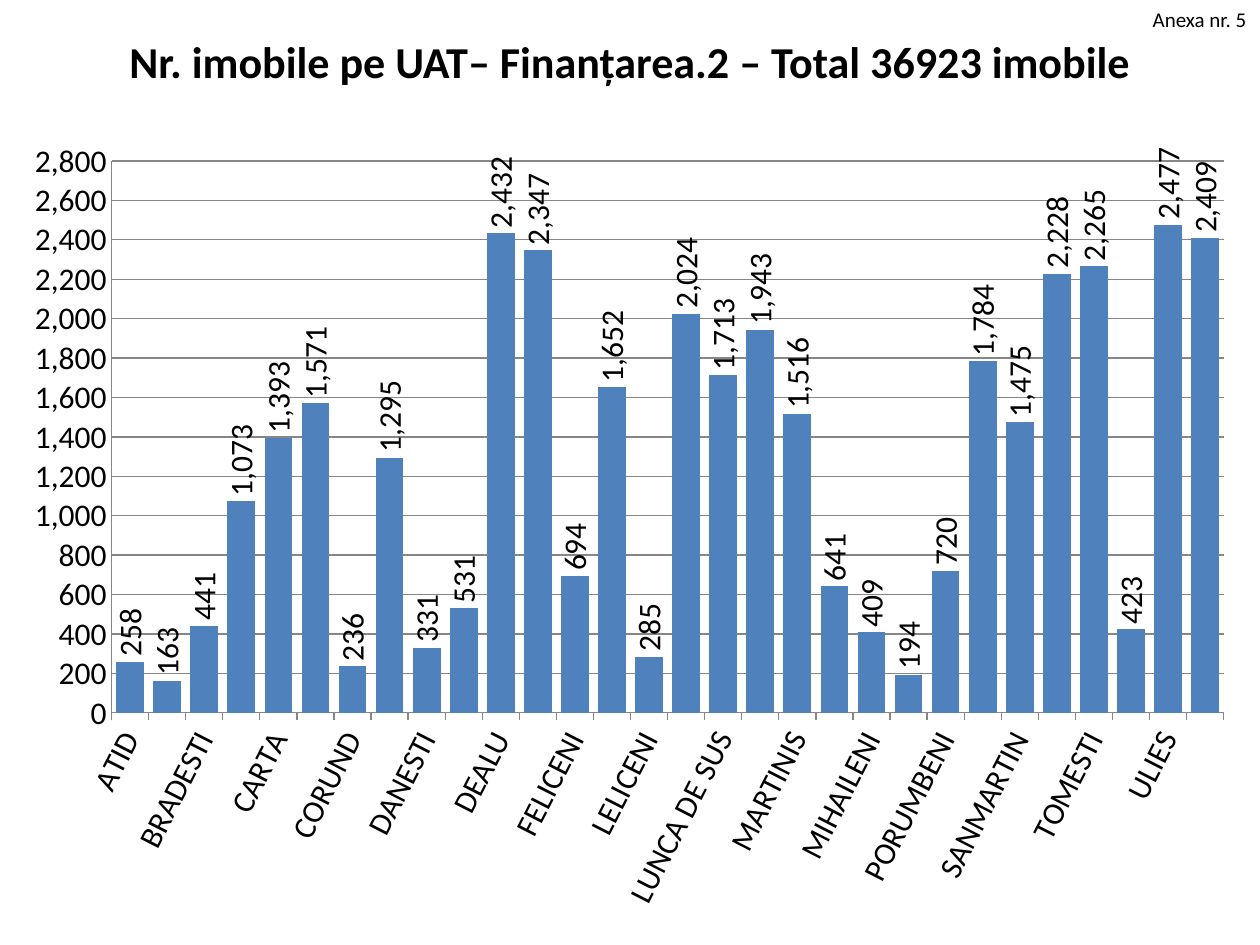
"""Build a slide with a column chart of properties per administrative unit."""
from dataclasses import dataclass

from lxml import etree
from pptx import Presentation
from pptx import util as u
from pptx.chart.chart import Chart
from pptx.chart.data import CategoryChartData
from pptx.dml.color import RGBColor
from pptx.enum import chart as charts, text
from pptx.oxml import parse_xml
from pptx.oxml.ns import nsdecls, qn
from pptx.slide import Slide


@dataclass(frozen=True)
class Theme:
    """Typeface, type sizes and colours."""
    font: str = "Calibri"
    title_size: float = 25.2
    chart_size: float = 18
    note_size: float = 12
    ink: RGBColor = RGBColor(0, 0, 0)
    column: RGBColor = RGBColor(0x4F, 0x81, 0xBD)
    line: RGBColor = RGBColor(0x86, 0x86, 0x86)


@dataclass(frozen=True)
class Box:
    """A rectangle in shares of its container."""
    left: float
    top: float
    width: float
    height: float

    def on_slide(self) -> tuple[int, int, int, int]:
        """Return the rectangle as slide lengths."""
        return (int(self.left * WIDTH), int(self.top * HEIGHT),
                int(self.width * WIDTH), int(self.height * HEIGHT))


@dataclass(frozen=True)
class Label:
    """A single line of text and its setting."""
    wording: str
    box: Box
    size: float
    bold: bool = False
    wrap: bool = True
    align: text.PP_ALIGN = text.PP_ALIGN.LEFT
    anchor: text.MSO_ANCHOR = text.MSO_ANCHOR.TOP


THEME = Theme()
WIDTH, HEIGHT = u.Inches(10), u.Inches(7.5)
CHART_BOX = Box(0.008, 0.1333, 0.983, 0.844)
PLOT_BOX = Box(0.082, 0.044, 0.898, 0.692)
LABELS = (
    Label("Nr. imobile pe UAT– Finanțarea.2 – Total 36923 imobile",
          Box(0.05, 0.005, 0.9, 0.118), THEME.title_size, bold=True,
          align=text.PP_ALIGN.CENTER, anchor=text.MSO_ANCHOR.MIDDLE),
    Label("Anexa nr. 5", Box(0.905, 0, 0.095, 0.04), THEME.note_size, wrap=False),
)
PROPERTIES = {
    "ATID": 258, "AVRAMESTI": 163, "BRADESTI": 441, "CAPALNITA": 1073,
    "CARTA": 1393, "CICEU": 1571, "CORUND": 236, "CRISTURU SECUIESC": 1295,
    "DANESTI": 331, "DARJIU": 531, "DEALU": 2432, "DITRAU": 2347,
    "FELICENI": 694, "FRUMOASA": 1652, "LELICENI": 285, "LUNCA DE JOS": 2024,
    "LUNCA DE SUS": 1713, "LUPENI": 1943, "MARTINIS": 1516, "MERESTI": 641,
    "MIHAILENI": 409, "PAULENI-CIUC": 194, "PORUMBENI": 720, "PRAID": 1784,
    "SANMARTIN": 1475, "SATU MARE": 2228, "TOMESTI": 2265, "TULGHES": 423,
    "ULIES": 2477, "VLAHITA": 2409,
}


def set_font(font, size: float, bold: bool = False) -> None:
    """Apply the theme's typeface and ink."""
    font.name, font.size, font.bold = THEME.font, u.Pt(size), bold
    font.color.rgb = THEME.ink


def add_label(slide: Slide, label: Label) -> None:
    """Add one text box."""
    frame = slide.shapes.add_textbox(*label.box.on_slide()).text_frame
    frame.word_wrap, frame.vertical_anchor = label.wrap, label.anchor
    paragraph = frame.paragraphs[0]
    paragraph.alignment = label.align
    run = paragraph.add_run()
    run.text = label.wording
    set_font(run.font, label.size, label.bold)


def turn_text(element: etree.ElementBase, degrees: int) -> None:
    """Rotate the text of a chart part."""
    body = element.find(f"{qn('c:txPr')}/{qn('a:bodyPr')}")
    body.set("rot", str(degrees * 60000))
    body.set("vert", "horz")


def place_plot(chart: Chart, box: Box) -> None:
    """Fix the inner plot area within the chart."""
    plot_area = chart.plots[0]._element.getparent()
    for layout in plot_area.findall(qn("c:layout")):
        plot_area.remove(layout)
    settings = {"layoutTarget": "inner", "xMode": "edge", "yMode": "edge",
                "x": box.left, "y": box.top, "w": box.width, "h": box.height}
    inner = "".join(f'<c:{name} val="{value}"/>' for name, value in settings.items())
    plot_area.insert(0, parse_xml(
        f'<c:layout {nsdecls("c")}><c:manualLayout>{inner}</c:manualLayout></c:layout>'))


def style_axes(chart: Chart) -> None:
    """Set scale, gridlines, ticks and labels of both axes."""
    category, value = chart.category_axis, chart.value_axis
    value.minimum_scale, value.maximum_scale, value.major_unit = 0, 2800, 200
    value.has_major_gridlines = True
    value.major_tick_mark = charts.XL_TICK_MARK.NONE
    category.major_tick_mark = charts.XL_TICK_MARK.OUTSIDE
    value.tick_labels.number_format = "#,##0"
    value.tick_labels.number_format_is_linked = False
    for line in (category.format.line, value.format.line, value.major_gridlines.format.line):
        line.color.rgb, line.width = THEME.line, u.Pt(0.75)
    for axis in (category, value):
        set_font(axis.tick_labels.font, THEME.chart_size)
    turn_text(category._element, -63)


def add_property_chart(slide: Slide) -> None:
    """Add the column chart with its upright value labels."""
    data = CategoryChartData(number_format="#,##0")
    data.categories = list(PROPERTIES)
    data.add_series("Series 1", list(PROPERTIES.values()))
    chart = slide.shapes.add_chart(
        charts.XL_CHART_TYPE.COLUMN_CLUSTERED, *CHART_BOX.on_slide(), data).chart
    chart.has_legend = chart.has_title = False
    set_font(chart.font, THEME.chart_size)
    plot = chart.plots[0]
    plot.gap_width, plot.vary_by_categories = 34, False
    series = plot.series[0]
    series.format.fill.solid()
    series.format.fill.fore_color.rgb = THEME.column
    labels = series.data_labels
    labels.show_value = True
    labels.number_format, labels.number_format_is_linked = "#,##0", False
    labels.position = charts.XL_LABEL_POSITION.OUTSIDE_END
    set_font(labels.font, THEME.chart_size)
    turn_text(labels._element, -90)
    style_axes(chart)
    place_plot(chart, PLOT_BOX)


def main() -> None:
    """Build and save the presentation."""
    presentation = Presentation()
    presentation.slide_width, presentation.slide_height = WIDTH, HEIGHT
    slide = presentation.slides.add_slide(presentation.slide_layouts[6])
    add_property_chart(slide)
    for label in LABELS:
        add_label(slide, label)
    presentation.save("out.pptx")


if __name__ == "__main__":
    main()
